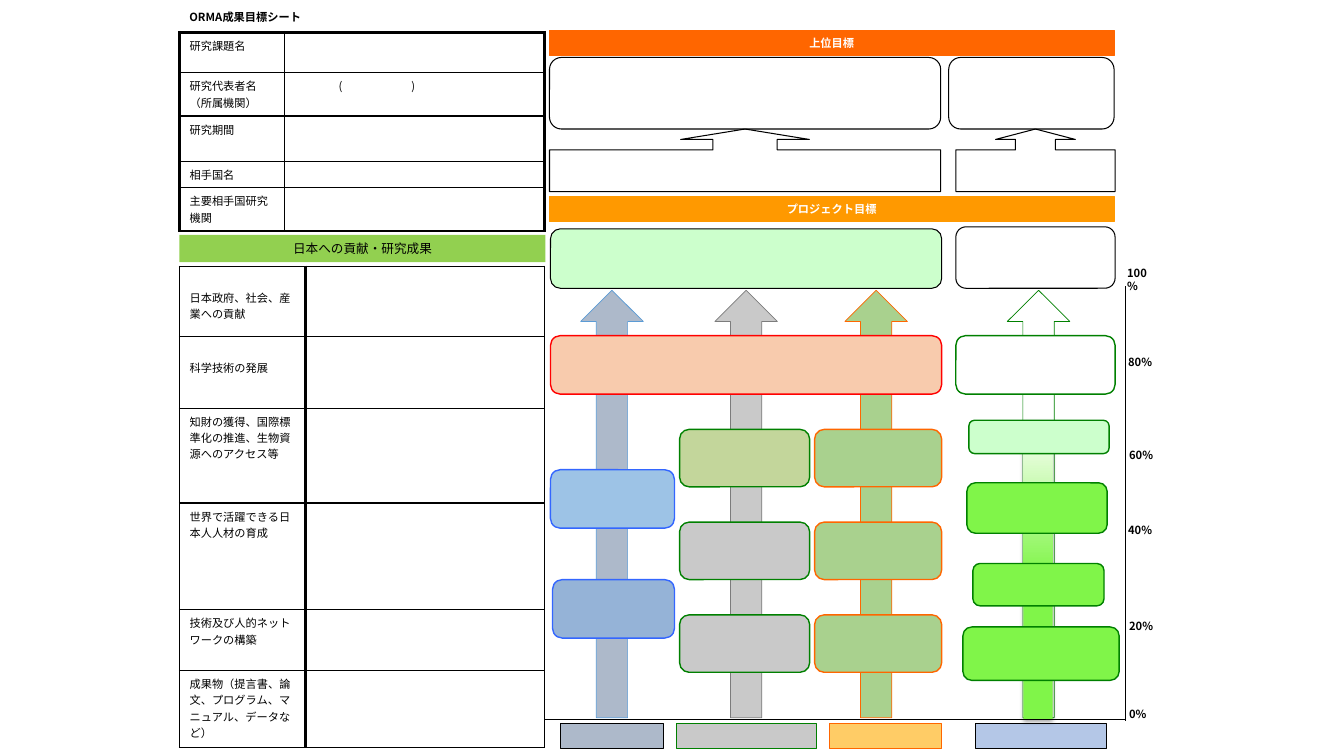
from lxml import etree
from pptx import Presentation
from pptx import util as u
from pptx.dml.color import RGBColor
from pptx.enum import shapes, text
from pptx.oxml.ns import qn

FONT = "Noto Sans CJK JP"
KIND = shapes.MSO_SHAPE
COLORS = {
    "black": "000000", "white": "FFFFFF", "red": "FF0000",
    "orange": "FF6600", "amber": "FF9900", "sand": "FFCC66", "peach": "F8CBAD",
    "dark_green": "008000", "leaf": "92D050", "mint": "CCFFCC", "sage": "A9D18E",
    "olive": "C3D69B", "lime": "80F549",
    "slate": "ADB9CA", "periwinkle": "B4C7E7", "sky": "9DC3E6", "steel": "95B3D7",
    "royal": "3366FF", "azure": "5B9BD5", "silver": "C9C9C9", "gray": "7C7C7C",
}
CENTERED = {"alignment": text.PP_ALIGN.CENTER}
SHEET_LEFT = 1.78

PROJECT_ROWS = [
    ("研究課題名", 0.4), ("研究代表者名\v（所属機関）", 0.43), ("研究期間", 0.45),
    ("相手国名", 0.25), ("主要相手国研究機関", 0.43),
]
OUTCOME_ROWS = [
    ("日本政府、社会、産業への貢献", 0.7), ("科学技術の発展", 0.71),
    ("知財の獲得、国際標準化の推進、生物資源へのアクセス等", 0.94),
    ("世界で活躍できる日本人人材の育成", 1.06),
    ("技術及び人的ネットワークの構築", 0.6),
    ("成果物（提言書、論文、プログラム、マニュアル、データなど）", 0.77),
]
SCALE = [("100%", 11.08, 2.59), ("80%", 11.09, 3.48), ("60%", 11.1, 4.4),
         ("40%", 11.09, 5.14), ("20%", 11.1, 6.1), ("0%", 11.1, 6.97)]
ARROWS = [(5.76, "slate", "azure"), (7.09, "silver", "gray"),
          (8.38, "sage", "orange"), (9.99, "white", "dark_green")]
GOALS = [
    ((5.45, 0.57, 3.88, 0.71), "white"), ((9.41, 0.57, 1.64, 0.71), "white"),
    ((5.46, 2.27, 3.88, 0.59), "mint"), ((9.48, 2.25, 1.58, 0.61), "white"),
]
THEMES = [
    (5.56, 1.02, "slate", "black"), (6.71, 1.39, "silver", "dark_green"),
    (8.23, 1.11, "sand", "orange"), (9.68, 1.3, "periwinkle", "black"),
]
STEP_TOPS = (4.26, 5.18, 6.1)
MILESTONES = [
    ((5.46, 3.33, 3.88, 0.58), "peach", "red"),
    ((9.48, 3.33, 1.58, 0.58), "white", "dark_green"),
    ((5.46, 4.66, 1.23, 0.58), "sky", "royal"),
    ((5.48, 5.75, 1.21, 0.58), "steel", "royal"),
    ((9.61, 4.17, 1.39, 0.33), "mint", "dark_green"),
    ((9.59, 4.79, 1.39, 0.5), "lime", "dark_green"),
    ((9.65, 5.59, 1.3, 0.42), "lime", "dark_green"),
    ((9.55, 6.22, 1.55, 0.53), "lime", "dark_green"),
]


def rgb(color):
    return RGBColor.from_string(COLORS[color])


def inches(box):
    return [u.Inches(length) for length in box]


def apply(target, values):
    for attribute, value in values.items():
        setattr(target, attribute, value)


def write(frame, words, color="black", size=8, bold=False, **paragraph_format):
    frame.text = words
    for paragraph in frame.paragraphs:
        apply(paragraph, paragraph_format)
        for run in paragraph.runs:
            apply(run.font, {"size": u.Pt(size), "bold": bold, "name": FONT})
            run.font.color.rgb = rgb(color)
            etree.SubElement(run.font._element, qn("a:ea"), typeface=FONT)


def add_block(slide, kind, box, fill=None, line=None, width=0.75):
    block = slide.shapes.add_shape(kind, *inches(box))
    block.shadow.inherit = False
    if fill:
        block.fill.solid()
        block.fill.fore_color.rgb = rgb(fill)
    else:
        block.fill.background()
    if line:
        block.line.color.rgb = rgb(line)
        block.line.width = u.Pt(width)
    else:
        block.line.fill.background()
    return block


def add_banner(slide, words, box, fill, line=None, **font):
    banner = add_block(slide, KIND.RECTANGLE, box, fill, line)
    apply(banner.text_frame, {"vertical_anchor": text.MSO_ANCHOR.MIDDLE, "word_wrap": line is None})
    write(banner.text_frame, words, **font, **CENTERED)


def add_label(slide, words, box, wrap=False, **paragraph_format):
    frame = slide.shapes.add_textbox(*inches(box)).text_frame
    apply(frame, {"word_wrap": wrap, "auto_size": text.MSO_AUTO_SIZE.SHAPE_TO_FIT_TEXT})
    write(frame, words, bold=True, **paragraph_format)


def add_callout(slide, box, adjustments):
    callout = add_block(slide, KIND.UP_ARROW_CALLOUT, box, line="black")
    for index, value in enumerate(adjustments):
        callout.adjustments[index] = value


def add_rule(slide, start, end):
    rule = slide.shapes.add_connector(shapes.MSO_CONNECTOR.STRAIGHT, *inches(start + end))
    rule.line.color.rgb = rgb("black")
    rule.line.width = u.Pt(1)
    etree.SubElement(rule._element.spPr, qn("a:effectLst"))


def add_progress(slide, box):
    progress = add_block(slide, KIND.RECTANGLE, box)
    progress.fill.gradient()
    progress.fill.gradient_angle = 90
    for stop, position, color in zip(progress.fill.gradient_stops, (0.48, 1), ("lime", "white")):
        stop.position = position
        stop.color.rgb = rgb(color)
    effects = progress._element.spPr.find(qn("a:effectLst"))
    shadow = etree.SubElement(effects, qn("a:outerShdw"), blurRad=str(u.Pt(3.1)),
                              dist=str(u.Pt(1.8)), dir="5400000", rotWithShape="0")
    shade = etree.SubElement(shadow, qn("a:srgbClr"), val=COLORS["black"])
    etree.SubElement(shade, qn("a:alpha"), val="35000")


def set_borders(cell, widths):
    for side, width in zip("LRTB", widths):
        border = etree.SubElement(cell._tc.get_or_add_tcPr(), qn(f"a:ln{side}"), w=str(u.Pt(width)))
        ink = etree.SubElement(border, qn("a:solidFill"))
        etree.SubElement(ink, qn("a:srgbClr"), val=COLORS["black"])


def add_form(slide, top, rows, columns, outer, middle):
    heights = [height for _, height in rows]
    box = (SHEET_LEFT, top, sum(columns), sum(heights))
    form = slide.shapes.add_table(len(rows), len(columns), *inches(box)).table
    apply(form, {"first_row": False, "horz_banding": False})
    for column, width in zip(form.columns, columns):
        column.width = u.Inches(width)
    last = len(rows) - 1
    for index, (words, height) in enumerate(rows):
        form.rows[index].height = u.Inches(height)
        upper = outer if index == 0 else 1
        lower = outer if index == last else 1
        heading, entry = form.cell(index, 0), form.cell(index, 1)
        set_borders(heading, (outer, middle, upper, lower))
        set_borders(entry, (middle, outer, upper, lower))
        for cell in (heading, entry):
            cell.fill.background()
        write(heading.text_frame, words)
        etree.SubElement(entry.text_frame.paragraphs[0]._p, qn("a:endParaRPr"), sz="800")
    return form


def fill_affiliation(cell):
    cell.margin_left = u.Inches(0.54)
    write(cell.text_frame, "(\t)")
    stops = etree.SubElement(cell.text_frame.paragraphs[0]._p.get_or_add_pPr(), qn("a:tabLst"))
    etree.SubElement(stops, qn("a:tab"), pos=str(u.Inches(0.72)), algn="l")


def main():
    deck = Presentation()
    apply(deck, {"slide_width": u.Inches(13.33), "slide_height": u.Inches(7.5)})
    slide = deck.slides.add_slide(deck.slide_layouts[6])

    project = add_form(slide, 0.32, PROJECT_ROWS, (1.04, 2.58), 2.25, 1)
    fill_affiliation(project.cell(1, 1))
    outcomes = add_form(slide, 2.64, OUTCOME_ROWS, (1.25, 2.37), 1, 3)
    for index in (0, 1):
        outcomes.cell(index, 0).margin_top = u.Inches(0.23)

    add_label(slide, "ORMA成果目標シート", (SHEET_LEFT, 0.05, 3.6, 0.24), wrap=True)
    add_banner(slide, "日本への貢献・研究成果", (SHEET_LEFT, 2.33, 3.63, 0.27), "leaf", size=9)
    for words, top, color in (("上位目標", 0.3, "orange"), ("プロジェクト目標", 1.95, "amber")):
        add_banner(slide, words, (5.45, top, 5.6, 0.25), color, color, color="white", bold=True)

    for box, fill in GOALS:
        add_block(slide, KIND.ROUNDED_RECTANGLE, box, fill, "black")
    add_callout(slide, (5.45, 1.28, 3.88, 0.62), (1.029, 1.029, 0.167, 0.667))
    add_callout(slide, (9.48, 1.28, 1.58, 0.62), (0.639, 0.639, 0.167, 0.667))

    for left, width, fill, line in THEMES:
        add_block(slide, KIND.RECTANGLE, (left, 7.18, width, 0.25), fill, line)
    for left, fill, line in ARROWS:
        add_block(slide, KIND.UP_ARROW, (left, 2.88, 0.62, 4.24), fill, line, 0.5)
    add_progress(slide, (10.15, 4.17, 0.29, 2.96))
    for box, fill, line in MILESTONES:
        add_block(slide, KIND.ROUNDED_RECTANGLE, box, fill, line, 1)
    for top, fill in zip(STEP_TOPS, ("olive", "silver", "silver")):
        add_block(slide, KIND.ROUNDED_RECTANGLE, (6.74, top, 1.29, 0.57), fill, "dark_green", 1)
        add_block(slide, KIND.ROUNDED_RECTANGLE, (8.08, top, 1.26, 0.57), "sage", "orange", 1)

    add_rule(slide, (11.16, 2.84), (11.16, 7.15))
    add_rule(slide, (5.4, 7.14), (11.16, 7.14))
    for words, left, top in SCALE:
        add_label(slide, words, (left, top, 0.48, 0.24))
    deck.save("out.pptx")


if __name__ == "__main__":
    main()
